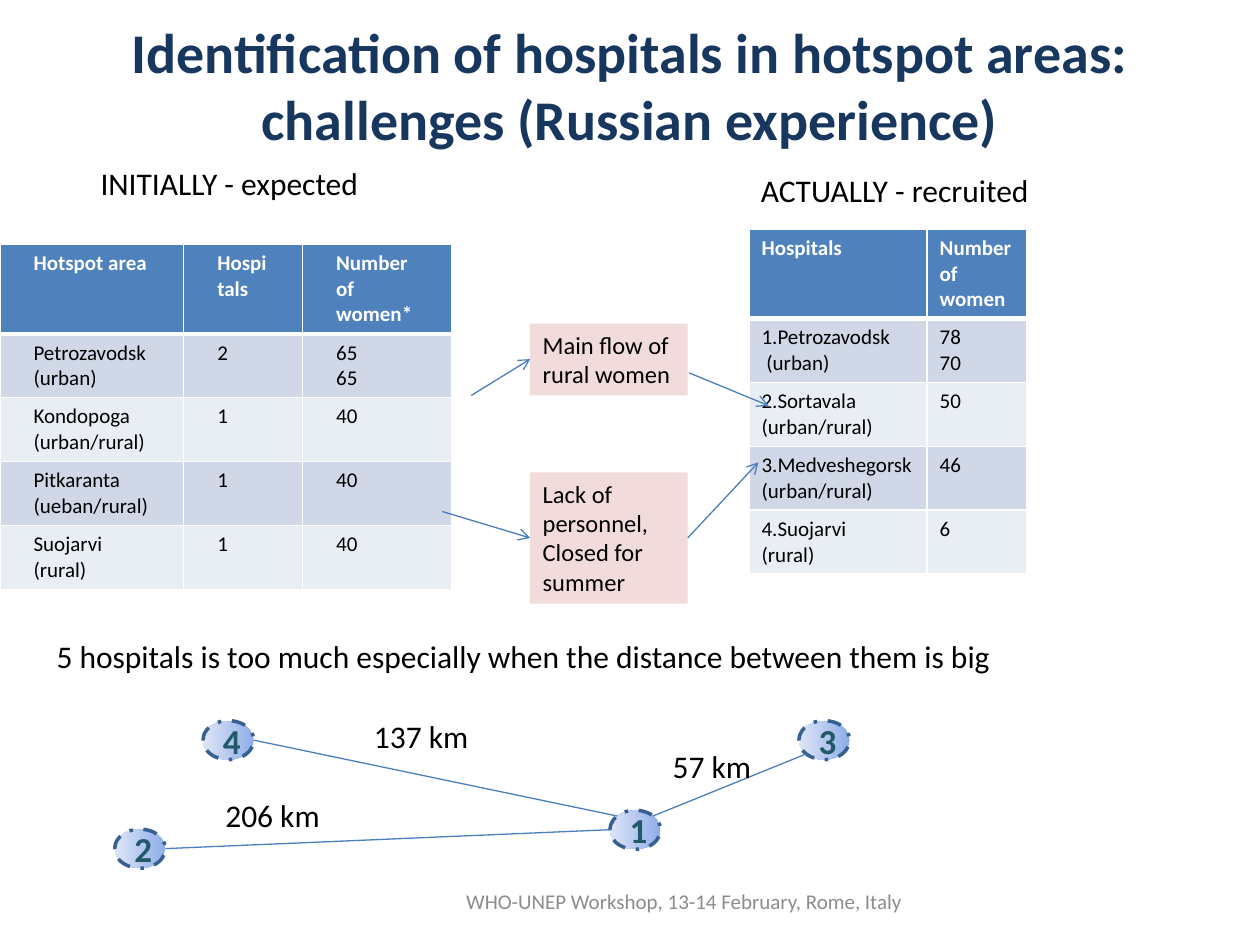
from dataclasses import dataclass

from lxml import etree
from pptx import Presentation
from pptx.dml.color import RGBColor
from pptx.enum.dml import MSO_LINE_DASH_STYLE as Dash
from pptx.enum.shapes import MSO_CONNECTOR as Connector, MSO_SHAPE as Shape
from pptx.enum.text import MSO_ANCHOR as Anchor, PP_ALIGN as Align
from pptx.oxml.ns import qn
from pptx.util import Pt


@dataclass(frozen=True)
class Theme:
    font: str = "Calibri"
    title: str = "17375E"
    text: str = "000000"
    white: str = "FFFFFF"
    footer: str = "8C8C8C"
    header: str = "4F81BD"
    bands: tuple = ("D0D8E8", "E9EDF4")
    note: str = "F2DCDB"
    line: str = "4B7EBC"
    node_line: str = "376092"
    node_text: str = "215968"
    node_fill: tuple = ("8FADE9", "DEE6F7")
    title_size: int = 32
    node_size: int = 20
    body_size: int = 18
    note_size: int = 14
    small_size: int = 12


T = Theme()
rgb = RGBColor.from_string


def write(tf, *lines, size=T.body_size, color=T.text, bold=False,
          align=Align.LEFT, anchor=Anchor.TOP, wrap=True):
    """Write one paragraph per line; a vertical tab breaks inside a paragraph."""
    tf.word_wrap = wrap
    tf.vertical_anchor = anchor
    for i, line in enumerate(lines):
        p = tf.paragraphs[0] if i == 0 else tf.add_paragraph()
        p.text = line
        p.alignment = align
        for r in p.runs:
            r.font.name = T.font
            r.font.size = Pt(size)
            r.font.bold = bold
            r.font.color.rgb = rgb(color)


def add_text(s, box, *lines, **fmt):
    write(s.shapes.add_textbox(*map(Pt, box)).text_frame, *lines, **fmt)


def add_label(s, box, text):
    add_text(s, box, text, wrap=False)


def add_shape(s, kind, box):
    sp = s.shapes.add_shape(kind, *map(Pt, box))
    sp.shadow.inherit = False
    sp.line.fill.background()
    return sp


def add_line(s, start, end, arrow=False):
    cn = s.shapes.add_connector(Connector.STRAIGHT, *map(Pt, (*start, *end)))
    cn.line.color.rgb = rgb(T.line)
    cn.line.width = Pt(0.75)
    if arrow:
        etree.SubElement(cn.line._get_or_add_ln(), qn("a:tailEnd"), type="arrow")
    etree.SubElement(cn._element.spPr, qn("a:effectLst"))


def set_borders(cell, top, bottom):
    tc_pr = cell._tc.get_or_add_tcPr()
    for i, (side, width) in enumerate(zip("LRTB", (1, 1, top, bottom))):
        ln = etree.Element(qn(f"a:ln{side}"), w=str(Pt(width)))
        fill = etree.SubElement(ln, qn("a:solidFill"))
        etree.SubElement(fill, qn("a:srgbClr"), val=T.white)
        tc_pr.insert(i, ln)


def hospital_table(s, origin, widths, rows, margin):
    """Place a banded table; each cell is a tuple of its lines."""
    heights = [50.4] + [36] * (len(rows) - 1)
    table = s.shapes.add_table(len(rows), len(widths), *map(Pt, origin),
                               Pt(sum(widths)), Pt(sum(heights))).table
    for column, width in zip(table.columns, widths):
        column.width = Pt(width)
    for i, (row, height) in enumerate(zip(rows, heights)):
        table.rows[i].height = Pt(height)
        head = i == 0
        for j, lines in enumerate(row):
            cell = table.cell(i, j)
            cell.margin_left = cell.margin_right = Pt(margin)
            cell.fill.solid()
            cell.fill.fore_color.rgb = rgb(T.header if head else T.bands[(i - 1) % 2])
            set_borders(cell, top=3 if i == 1 else 1, bottom=3 if head else 1)
            write(cell.text_frame, *lines, size=T.small_size, bold=head,
                  color=T.white if head else T.text)


def recruitment_flow(s, x, y):
    """Place the two reasons and the arrows that lead past them."""
    notes = (
        (5, 41, ("Main flow of rural women",)),
        (90, 75, ("Lack of personnel,", "Closed for summer")),
    )
    for top, height, lines in notes:
        sp = add_shape(s, Shape.RECTANGLE, (x + 51, y + top, 90, height))
        sp.fill.solid()
        sp.fill.fore_color.rgb = rgb(T.note)
        write(sp.text_frame, *lines, size=T.note_size)
    arrows = (
        (17.3, 46, 51, 25.2), (141.8, 33.1, 187.2, 51.8),
        (0.7, 112.3, 51, 127.4), (141, 127.4, 181.4, 84.2),
    )
    for x1, y1, x2, y2 in arrows:
        add_line(s, (x + x1, y + y1), (x + x2, y + y2), arrow=True)


def distance_map(s, x, y):
    """Place numbered hospitals, the links between them and their distances."""
    width, height = 29, 22.3
    nodes = {"1": (283.5, 58), "3": (391.5, 6.8), "4": (51, 6.8), "2": (0.5, 68.8)}
    for number, (dx, dy) in nodes.items():
        sp = add_shape(s, Shape.OVAL, (x + dx, y + dy, width, height))
        sp.fill.gradient()
        sp.fill.gradient_angle = 180
        for stop, color in zip(sp.fill.gradient_stops, T.node_fill):
            stop.color.rgb = rgb(color)
        sp.line.color.rgb = rgb(T.node_line)
        sp.line.width = Pt(2)
        sp.line.dash_style = Dash.DASH_DOT
        write(sp.text_frame, number, size=T.node_size, color=T.node_text,
              bold=True, align=Align.CENTER, anchor=Anchor.MIDDLE)

    def site(number, fx, fy):
        dx, dy = nodes[number]
        return x + dx + fx * width, y + dy + fy * height

    near, far = 0.15, 0.85
    add_line(s, site("1", far, near), site("3", near, far))
    add_line(s, site("1", near, near), site("4", 1, 0.5))
    add_line(s, site("1", 0, 0.5), site("2", 1, 0.5))
    labels = (("57 km", 312.3, 18.4, 60), ("137 km", 141.6, 1.1, 69),
              ("206 km", 56.7, 46.4, 69))
    for text, dx, dy, w in labels:
        add_label(s, (x + dx, y + dy, w, 29), text)


EXPECTED = (
    (("Hotspot area",), ("Hospitals",), ("Number of women*",)),
    (("Petrozavodsk (urban)",), ("2",), ("65", "65")),
    (("Kondopoga", "(urban/rural)"), ("1",), ("40",)),
    (("Pitkaranta", "(ueban/rural)"), ("1",), ("40",)),
    (("Suojarvi", "(rural)"), ("1",), ("40",)),
)
RECRUITED = (
    (("Hospitals",), ("Number of women",)),
    (("1.Petrozavodsk", " (urban)"), ("78", "70")),
    (("2.Sortavala", "(urban/rural)"), ("50",)),
    (("3.Medveshegorsk", "(urban/rural)"), ("46",)),
    (("4.Suojarvi", "(rural)"), ("6",)),
)


def main():
    prs = Presentation()
    prs.slide_width, prs.slide_height = Pt(720), Pt(540)
    s = prs.slides.add_slide(prs.slide_layouts[6])
    hospital_table(s, (0, 139.7), (105, 67.9, 85), EXPECTED, margin=19.2)
    hospital_table(s, (428, 131), (101.8, 56.7), RECRUITED, margin=7.2)
    add_label(s, (50.4, 90, 163.5, 29), "INITIALLY - expected")
    add_label(s, (427.7, 94.3, 169, 29), "ACTUALLY - recruited")
    add_text(s, (36, 11.5, 648, 73.5),
             "Identification of hospitals in hotspot areas:\vchallenges (Russian experience)",
             size=T.title_size, color=T.title, bold=True,
             align=Align.CENTER, anchor=Anchor.MIDDLE)
    recruitment_flow(s, 252, 180)
    add_label(s, (25.2, 360.7, 555, 29),
              "5 hospitals is too much especially when the distance between them is big")
    distance_map(s, 65, 405)
    add_text(s, (246.2, 500.4, 289.5, 28.8),
             "WHO-UNEP Workshop, 13-14 February, Rome, Italy",
             size=T.small_size, color=T.footer, align=Align.CENTER, anchor=Anchor.MIDDLE)
    prs.save("out.pptx")


if __name__ == "__main__":
    main()
